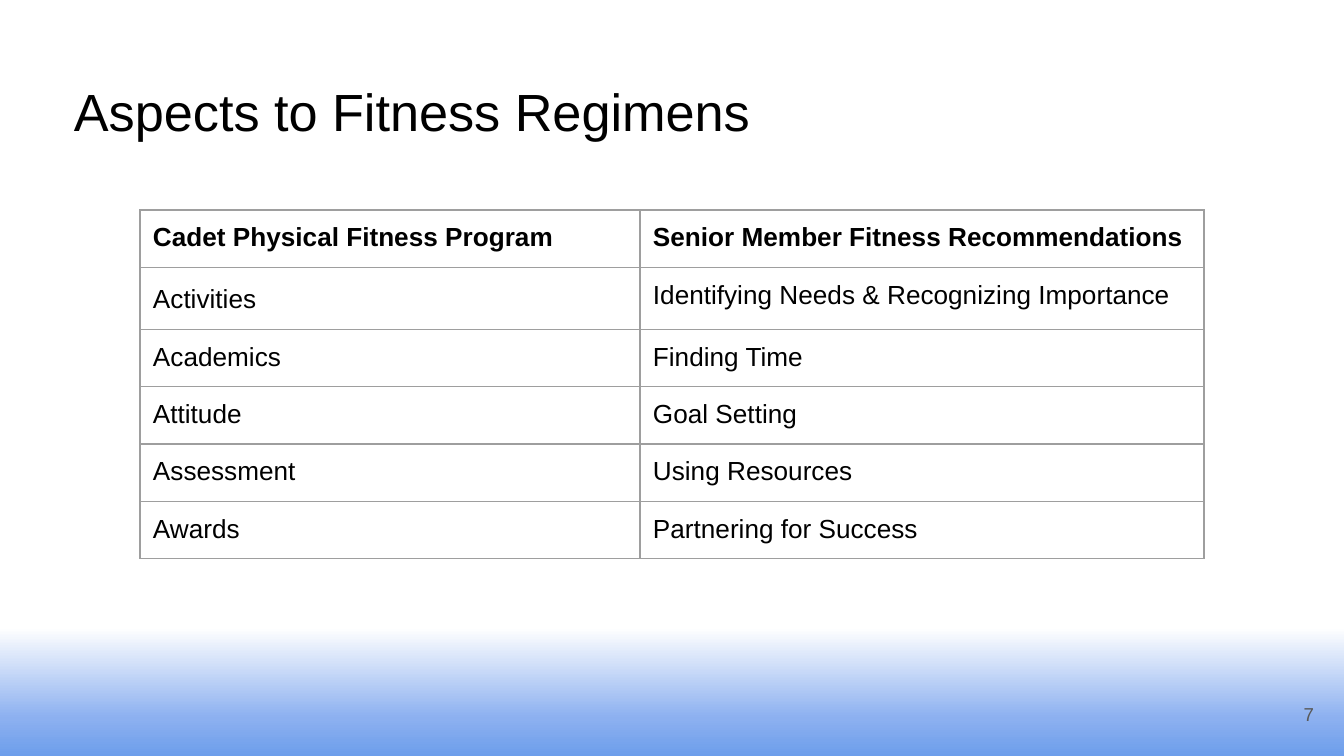
from lxml.etree import SubElement
from pptx import Presentation
from pptx.dml.color import RGBColor
from pptx.enum.text import MSO_ANCHOR, PP_ALIGN
from pptx.oxml.ns import qn
from pptx.util import Emu, Pt

BLACK = RGBColor(0x00, 0x00, 0x00)
GRAY = RGBColor(0x59, 0x59, 0x59)
BORDER = RGBColor(0x9E, 0x9E, 0x9E)
WHITE = RGBColor(0xFF, 0xFF, 0xFF)
LIGHT_BLUE = RGBColor(0x8C, 0xB0, 0xF0)
BLUE = RGBColor(0x6D, 0x9E, 0xEB)

INSET = 13
ROW_HEIGHT = 56
COLUMN_WIDTHS = (500, 564)
ROWS = (
    ("Cadet Physical Fitness Program", "Senior Member Fitness Recommendations"),
    ("Activities", "Identifying Needs & Recognizing Importance"),
    ("Academics", "Finding Time"),
    ("Attitude", "Goal Setting"),
    ("Assessment", "Using Resources"),
    ("Awards", "Partnering for Success"),
)


def px(value):
    return Emu(round(value * 914400 / 134.4))


def set_text(text_frame, text, size, color, bold=False):
    text_frame.word_wrap = True
    text_frame.margin_left = text_frame.margin_right = px(INSET)
    text_frame.margin_top = text_frame.margin_bottom = px(INSET)
    text_frame.text = text
    font = text_frame.paragraphs[0].runs[0].font
    font.name = "Arial"
    font.size = Pt(size)
    font.bold = bold
    font.color.rgb = color


presentation = Presentation()
presentation.slide_width = px(1344)
presentation.slide_height = px(756)
slide = presentation.slides.add_slide(presentation.slide_layouts[6])

# Background: white fading to blue at the bottom
background_fill = slide.background.fill
background_fill.gradient()
background_fill.gradient_angle = 270
stop_list = slide.element.find(".//" + qn("a:gsLst"))
for stop in list(stop_list):
    stop_list.remove(stop)
for percent, color in ((0, WHITE), (83, WHITE), (95, LIGHT_BLUE), (100, BLUE)):
    stop = SubElement(stop_list, qn("a:gs"), pos=str(percent * 1000))
    SubElement(stop, qn("a:srgbClr"), val=str(color))

# Title
title = slide.shapes.add_textbox(px(46), px(66), px(1252), px(84))
set_text(title.text_frame, "Aspects to Fitness Regimens", 28, BLACK)
title.text_frame.margin_left = px(28)

# Table
table_shape = slide.shapes.add_table(
    len(ROWS), len(COLUMN_WIDTHS), px(140), px(210),
    px(sum(COLUMN_WIDTHS)), px(ROW_HEIGHT * len(ROWS)))
table = table_shape.table
table.first_row = False
table.horz_banding = False
for column, width in zip(table.columns, COLUMN_WIDTHS):
    column.width = px(width)

for row_index, labels in enumerate(ROWS):
    table.rows[row_index].height = px(ROW_HEIGHT)
    for column_index, label in enumerate(labels):
        cell = table.cell(row_index, column_index)
        set_text(cell.text_frame, label, 14, BLACK, bold=row_index == 0)
        cell.margin_left = cell.margin_right = px(INSET)
        cell.margin_top = cell.margin_bottom = px(INSET)
        # Borders come before the fill in the cell properties
        properties = cell._tc.get_or_add_tcPr()
        for side in ("a:lnL", "a:lnR", "a:lnT", "a:lnB"):
            line = SubElement(properties, qn(side), w=str(Pt(0.75)))
            line_fill = SubElement(line, qn("a:solidFill"))
            SubElement(line_fill, qn("a:srgbClr"), val=str(BORDER))
        cell.fill.background()
table.cell(1, 0).text_frame.paragraphs[0].line_spacing = 1.15

# Slide number
number = slide.shapes.add_textbox(px(1246), px(685), px(81), px(58))
set_text(number.text_frame, "7", 10, GRAY)
number.text_frame.vertical_anchor = MSO_ANCHOR.MIDDLE
number.text_frame.paragraphs[0].alignment = PP_ALIGN.RIGHT

presentation.save("out.pptx")
